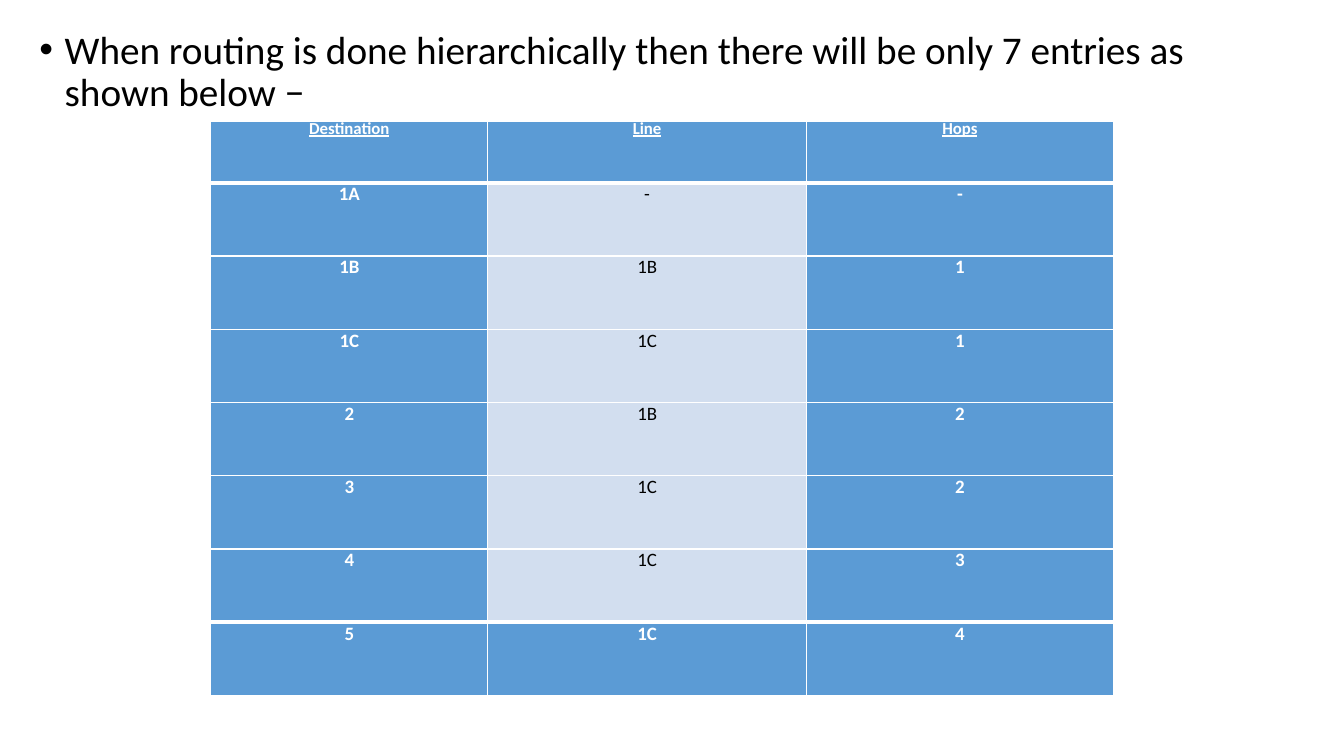
"""Build the hierarchical routing table slide."""
from lxml import etree
from pptx import Presentation, util as u
from pptx.dml.color import RGBColor
from pptx.enum import text
from pptx.oxml.ns import qn

COLORS = {"blue": "5B9BD5", "pale": "D2DEEF", "white": "FFFFFF", "black": "000000"}
STATEMENT = ("When routing is done hierarchically then there will be only "
             "7 entries as shown below −")
ROUTES = [
    ("Destination", "Line", "Hops"),
    ("1A", "-", "-"),
    ("1B", "1B", "1"),
    ("1C", "1C", "1"),
    ("2", "1B", "2"),
    ("3", "1C", "2"),
    ("4", "1C", "3"),
    ("5", "1C", "4"),
]
COLUMN_WIDTHS = (198, 227.5, 219.5)
HEADER_HEIGHT, ROW_HEIGHT = 44, 52.35
LAST = len(ROUTES) - 1


def apply(target, values):
    for name, value in values.items():
        setattr(target, name, value)


def write(para, words, color, **font):
    span = para.add_run()
    span.text = words
    apply(span.font, {"name": "Calibri", **font})
    span.font.color.rgb = RGBColor.from_string(COLORS[color])


def add_statement(page):
    body = page.placeholders[1]
    apply(body, {"left": u.Pt(21), "top": u.Pt(18),
                 "width": u.Pt(873.5), "height": u.Pt(510)})
    para = body.text_frame.paragraphs[0]
    apply(para, {"line_spacing": 0.9, "space_before": u.Pt(10)})
    props = para._p.get_or_add_pPr()
    props.set("marL", str(u.Pt(18)))
    props.set("indent", str(u.Pt(-18)))
    write(para, STATEMENT, "black", size=u.Pt(28))


def add_borders(cell, row):
    props = cell._tc.get_or_add_tcPr()
    widths = {"a:lnL": 1, "a:lnR": 1,
              "a:lnT": 3 if row in (1, LAST) else 1,
              "a:lnB": 3 if row in (0, LAST - 1) else 1}
    for tag, width in widths.items():
        line = etree.SubElement(props, qn(tag), w=str(u.Pt(width)))
        fill = etree.SubElement(line, qn("a:solidFill"))
        etree.SubElement(fill, qn("a:srgbClr"), val=COLORS["white"])


def fill_cell(cell, words, row, column):
    header = row == 0
    pale = column == 1 and 0 < row < LAST
    apply(cell, {"margin_left": 0, "margin_right": 0, "margin_top": 0,
                 "margin_bottom": 0, "vertical_anchor": text.MSO_ANCHOR.TOP})
    add_borders(cell, row)
    cell.fill.solid()
    cell.fill.fore_color.rgb = RGBColor.from_string(COLORS["pale" if pale else "blue"])
    para = cell.text_frame.paragraphs[0]
    para.alignment = text.PP_ALIGN.CENTER
    if header:
        para.line_spacing = u.Pt(12.6)
    write(para, words, "black" if pale else "white", bold=not pale,
          underline=header, size=u.Pt(12 if header else 13.5))


def add_routes(page):
    height = HEADER_HEIGHT + ROW_HEIGHT * LAST
    table = page.shapes.add_table(
        len(ROUTES), len(COLUMN_WIDTHS), u.Pt(150.5), u.Pt(86.5),
        u.Pt(sum(COLUMN_WIDTHS)), u.Pt(height)).table
    table.horz_banding = False
    for column, width in zip(table.columns, COLUMN_WIDTHS):
        column.width = u.Pt(width)
    for row, route in enumerate(ROUTES):
        table.rows[row].height = u.Pt(ROW_HEIGHT if row else HEADER_HEIGHT)
        for column, words in enumerate(route):
            fill_cell(table.cell(row, column), words, row, column)


def main():
    deck = Presentation()
    apply(deck, {"slide_width": u.Pt(960), "slide_height": u.Pt(540)})
    page = deck.slides.add_slide(deck.slide_layouts[1])
    title = page.shapes.title.element
    title.getparent().remove(title)
    add_statement(page)
    add_routes(page)
    deck.save("out.pptx")


if __name__ == "__main__":
    main()
